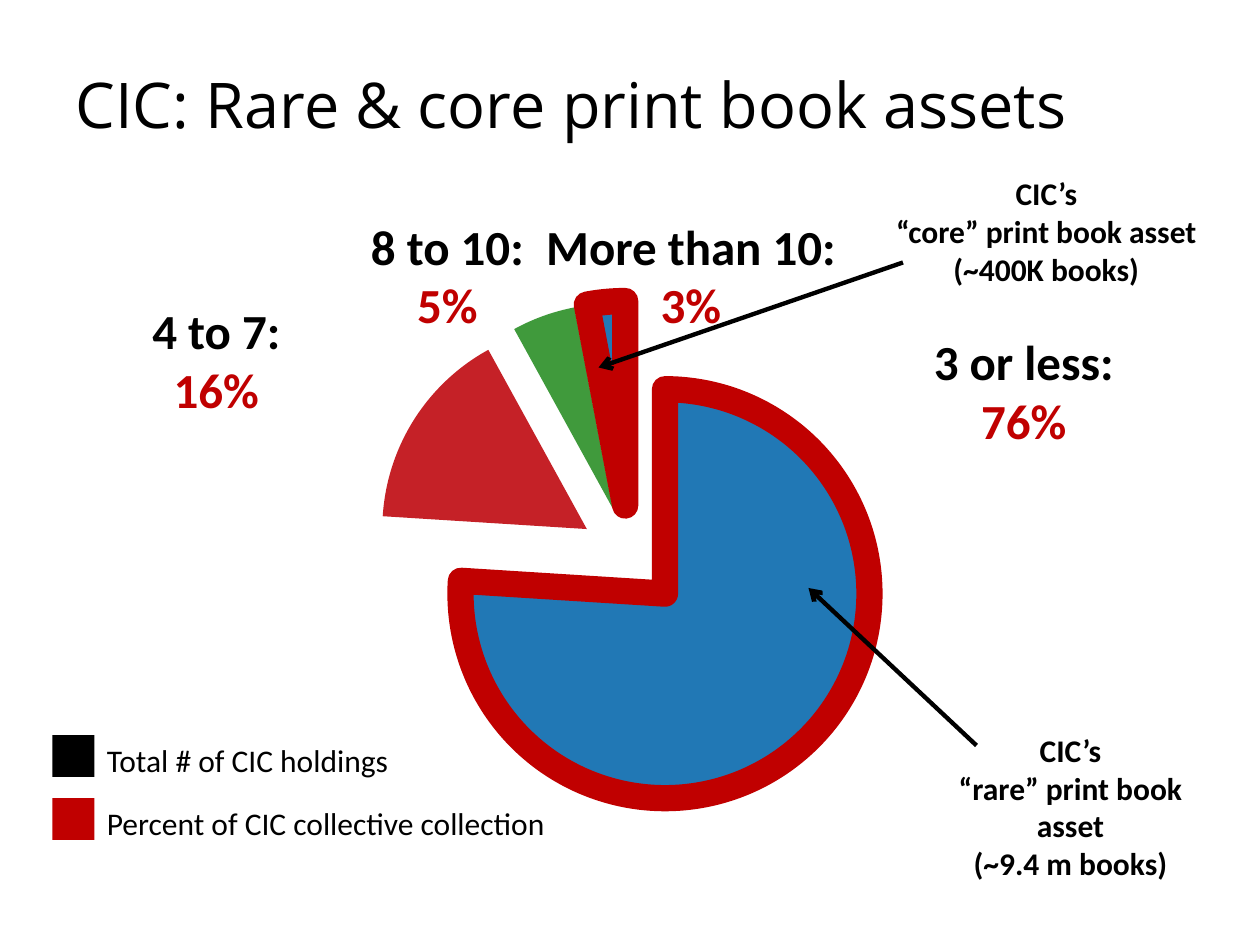
from lxml import etree
from pptx import Presentation
from pptx.chart.data import CategoryChartData
from pptx.dml.color import RGBColor
from pptx.enum.chart import XL_CHART_TYPE as ChartType
from pptx.enum.shapes import MSO_CONNECTOR as Connector, MSO_SHAPE as Shape
from pptx.enum.text import MSO_ANCHOR as Anchor, MSO_AUTO_SIZE as AutoSize, PP_ALIGN as Align
from pptx.oxml import parse_xml
from pptx.oxml.ns import nsdecls, qn
from pptx.util import Inches, Pt

BLACK, RED, BLUE = "000000", "C00000", "2178B5"


def rgb(code):
    return RGBColor.from_string(code)


class Deck:
    font = "Calibri"
    title_font = "Open Sans"
    cells_per_inch = 12

    def __init__(self):
        self.deck = Presentation()
        self.deck.slide_width, self.deck.slide_height = Inches(10), Inches(7.5)
        self.slide = self.deck.slides.add_slide(self.deck.slide_layouts[5])

    def grid(self, *cells):
        return [Inches(cell / self.cells_per_inch) for cell in cells]

    def style(self, font, size, color=BLACK, bold=False, name=None):
        font.name, font.size, font.bold = name or self.font, Pt(size), bold
        font.color.rgb = rgb(color)

    def title(self, wording, area):
        heading = self.slide.shapes.title
        heading.left, heading.top, heading.width, heading.height = self.grid(*area)
        heading.text_frame.vertical_anchor = Anchor.MIDDLE
        paragraph = heading.text_frame.paragraphs[0]
        paragraph.alignment = Align.LEFT
        run = paragraph.add_run()
        run.text = wording
        self.style(run.font, 36, name=self.title_font)

    def text(self, lines, area, size=18, bold=True, align=Align.CENTER, colors=()):
        frame = self.slide.shapes.add_textbox(*self.grid(*area)).text_frame
        frame.word_wrap = False
        frame.auto_size = AutoSize.SHAPE_TO_FIT_TEXT
        for index, line in enumerate(lines):
            paragraph = frame.add_paragraph() if index else frame.paragraphs[0]
            paragraph.alignment = align
            run = paragraph.add_run()
            run.text = line
            self.style(run.font, size, colors[index] if colors else BLACK, bold)

    def swatch(self, color, area):
        square = self.slide.shapes.add_shape(Shape.RECTANGLE, *self.grid(*area))
        square.shadow.inherit = False
        square.fill.solid()
        square.fill.fore_color.rgb = rgb(color)
        square.line.fill.background()

    def arrow(self, start, end):
        pointer = self.slide.shapes.add_connector(Connector.STRAIGHT, *self.grid(*start, *end))
        pointer.line.color.rgb = rgb(BLACK)
        pointer.line.width = Pt(2.5)
        etree.SubElement(pointer.line._get_or_add_ln(), qn("a:tailEnd"), type="arrow")
        etree.SubElement(pointer._element.spPr, qn("a:effectLst"))

    def pie(self, shares, colors, outlined, area):
        data = CategoryChartData()
        data.categories = [str(number + 1) for number in range(len(shares))]
        data.add_series("Series 1", shares)
        chart = self.slide.shapes.add_chart(ChartType.PIE, *self.grid(*area), data).chart
        chart.has_legend = chart.has_title = False
        self.style(chart.font, 10)
        plot = chart.plots[0]
        plot.vary_by_categories = True
        series = plot.series[0]
        for index, color in enumerate(colors):
            look = series.points[index].format
            look.fill.solid()
            look.fill.fore_color.rgb = rgb(color)
            if index in outlined:
                look.line.color.rgb = rgb(RED)
                look.line.width = Pt(15)
                etree.SubElement(look.line._get_or_add_ln(), qn("a:round"))
            else:
                look.line.fill.background()
        explosion = parse_xml(f'<c:explosion {nsdecls("c")} val="25"/>')
        series._element.find(qn("c:dPt")).addprevious(explosion)


def main():
    page = Deck()
    page.pie((76, 16, 5, 3), (BLUE, "C52127", "409A3C", BLUE), (0, 3), (19, 27, 82, 52))
    page.title("CIC: Rare & core print book assets", (6, 3.6, 108, 12.4))

    for holdings, percent, left, top, width in (
        ("3 or less:", "76%", 87.6, 31, 19.8),
        ("4 to 7:", "16%", 13.2, 28, 14.8),
        ("8 to 10:", "5%", 34, 20, 17.2),
        ("More than 10:", "3%", 50.6, 20, 30.4),
    ):
        page.text((holdings, percent), (left, top, width, 12.5), 28, colors=(BLACK, RED))

    for row, (color, meaning, width) in enumerate((
        (BLACK, "Total # of CIC holdings", 29.5),
        (RED, "Percent of CIC collective collection", 44.6),
    )):
        top = 70 + 6 * row
        page.swatch(color, (5, top, 4, 4))
        page.text((meaning,), (9, top, width, 4.8), bold=False, align=Align.LEFT)

    page.text(("CIC’s", "“core” print book asset", "(~400K books)"), (84, 16, 31.3, 12.1))
    page.arrow((86, 25), (57, 35))
    page.text(("CIC’s", "“rare” print book", "asset", "(~9.4 m books)"), (90, 69, 23.9, 15.7))
    page.arrow((93, 71), (77, 56))
    page.deck.save("out.pptx")


if __name__ == "__main__":
    main()
